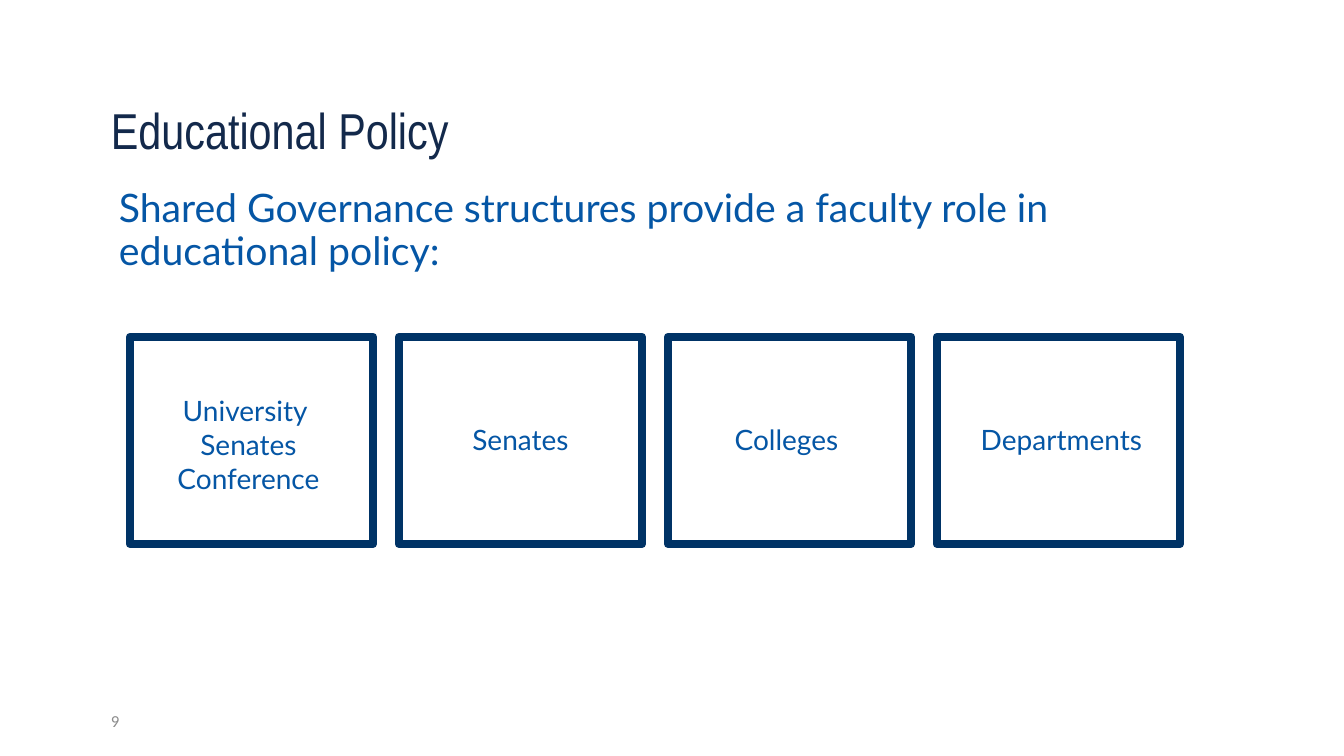
"""Build the Educational Policy slide with its four governance bodies."""
from lxml.etree import SubElement
from pptx import Presentation
from pptx.dml.color import RGBColor
from pptx.enum.shapes import MSO_SHAPE
from pptx.enum.text import MSO_ANCHOR, PP_ALIGN
from pptx.oxml.ns import qn
from pptx.util import Emu, Pt

EMU_PER_PX = 914400 / 100.8


def px(length):
    return Emu(round(length * EMU_PER_PX))


def add_text(text, left, top, width, height, font, size, color,
             anchor=MSO_ANCHOR.TOP, align=PP_ALIGN.LEFT, line_spacing=1.0):
    frame = slide.shapes.add_textbox(px(left), px(top), px(width), px(height)).text_frame
    frame.word_wrap = True
    frame.vertical_anchor = anchor
    paragraph = frame.paragraphs[0]
    paragraph.text = text
    paragraph.alignment = align
    paragraph.line_spacing = line_spacing
    paragraph.font.name = font
    paragraph.font.size = Pt(size)
    paragraph.font.color.rgb = RGBColor.from_string(color)


presentation = Presentation()
presentation.slide_width = px(1344)
presentation.slide_height = px(756)
slide = presentation.slides.add_slide(presentation.slide_layouts[6])

add_text("Educational Policy", 101, 82, 1151, 83, "Arial Narrow", 36, "13294B",
         anchor=MSO_ANCHOR.BOTTOM, line_spacing=0.9)
add_text("Shared Governance structures provide a faculty role in educational policy:",
         109, 184, 1106, 463, "Lato", 28, "0556A5", line_spacing=0.9)

for column in range(4):
    frame_box = slide.shapes.add_shape(MSO_SHAPE.RECTANGLE, px(130 + 269 * column), px(337),
                                       px(243), px(207))
    frame_box.shadow.inherit = False
    frame_box.fill.solid()
    frame_box.fill.fore_color.rgb = RGBColor.from_string("FFFFFF")
    white = frame_box.fill._xPr.find(qn("a:solidFill"))[0]
    SubElement(white, qn("a:alpha"), val="40000")
    frame_box.line.color.rgb = RGBColor.from_string("003366")
    frame_box.line.width = Pt(6)

governance_bodies = [
    ("University \vSenates Conference", 130, 389, 112),
    ("Senates", 402, 418, 44),
    ("Colleges", 668, 418, 44),
    ("Departments", 943, 418, 44),
]
for body, left, top, height in governance_bodies:
    add_text(body, left, top, 237, height, "Lato", 20, "0556A5", align=PP_ALIGN.CENTER)

add_text("9", 101, 701, 302, 40, "Calibri", 12, "8C8C8C", anchor=MSO_ANCHOR.MIDDLE)

presentation.save("out.pptx")
